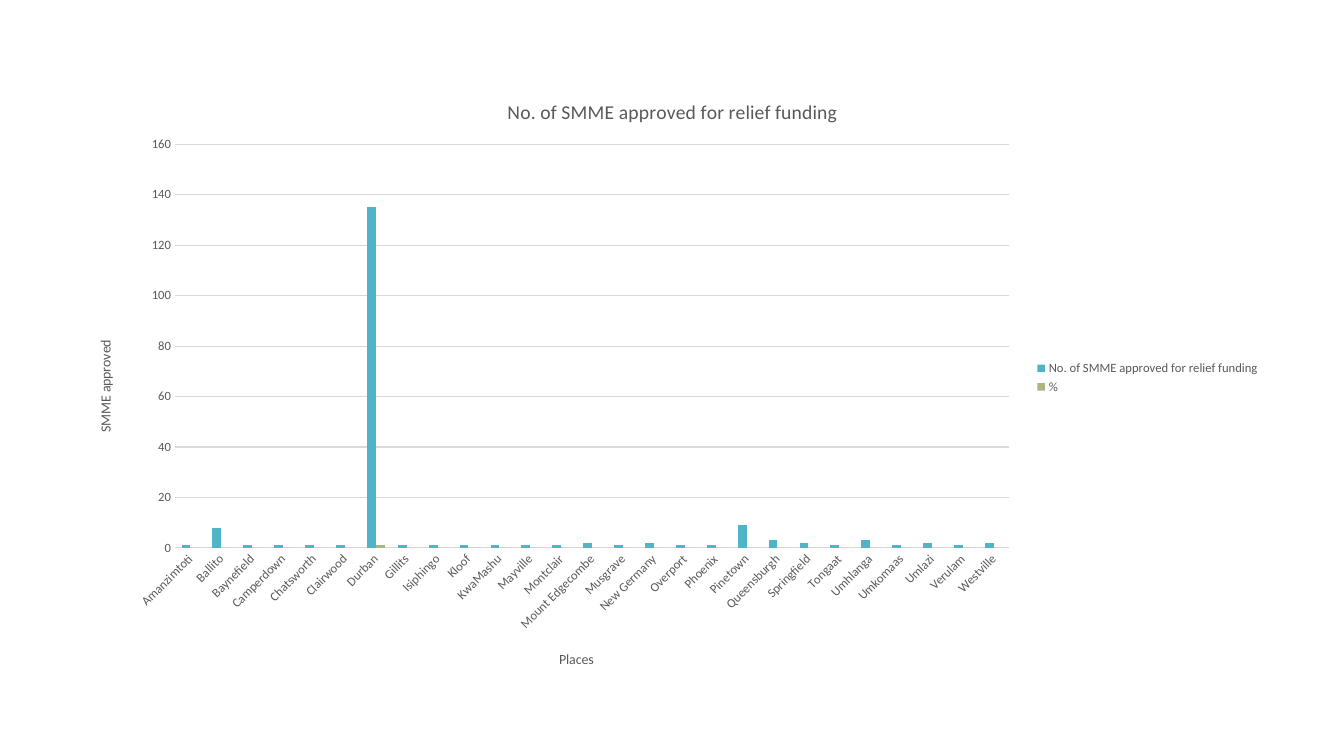
import pptx
import pptx.chart.data
import pptx.dml.color
import pptx.enum.chart
import pptx.oxml
import pptx.oxml.ns
import pptx.util
from dataclasses import dataclass

Pt = pptx.util.Pt


@dataclass(frozen=True)
class Theme:
    font: str = "Calibri"
    text: str = "595959"
    rule: str = "D9D9D9"
    approved: str = "50B4C8"
    percent: str = "A8B97F"
    title_size: float = 14
    axis_title_size: float = 10
    label_size: float = 9


THEME = Theme()
TITLE = "No. of SMME approved for relief funding"
CHART_BOX = (50.4, 50.4, 859, 438.5)

APPROVED = {
    "Amanzimtoti": 1, "Ballito": 8, "Baynefield": 1, "Camperdown": 1,
    "Chatsworth": 1, "Clairwood": 1, "Durban": 135, "Gillits": 1,
    "Isiphingo": 1, "Kloof": 1, "KwaMashu": 1, "Mayville": 1,
    "Montclair": 1, "Mount Edgecombe": 2, "Musgrave": 1, "New Germany": 2,
    "Overport": 1, "Phoenix": 1, "Pinetown": 9, "Queensburgh": 3,
    "Springfield": 2, "Tongaat": 1, "Umhlanga": 3, "Umkomaas": 1,
    "Umlazi": 2, "Verulam": 1, "Westville": 2,
}


def rgb(color):
    return pptx.dml.color.RGBColor.from_string(color)


def style_font(font, size):
    font.name = THEME.font
    font.size = Pt(size)
    font.bold = False
    font.color.rgb = rgb(THEME.text)


def style_line(line):
    line.color.rgb = rgb(THEME.rule)
    line.width = Pt(0.75)


def place(element, index, left, top, width=None, height=None):
    """Place a chart part at slide coordinates given in points."""
    for old in element.xpath("c:layout"):
        element.remove(old)
    x, y, w, h = CHART_BOX
    values = {"x": (left - x) / w, "y": (top - y) / h}
    modes = '<c:xMode val="edge"/><c:yMode val="edge"/>'
    if width:
        values |= {"w": width / w, "h": height / h}
        modes = '<c:layoutTarget val="inner"/>' + modes
    sizes = "".join(f'<c:{k} val="{v:.4f}"/>' for k, v in values.items())
    element.insert(index, pptx.oxml.parse_xml(
        f'<c:layout {pptx.oxml.ns.nsdecls("c")}><c:manualLayout>'
        f"{modes}{sizes}</c:manualLayout></c:layout>"))


def rotate(element, degrees):
    body = element.xpath(".//a:bodyPr")[0]
    body.set("rot", str(degrees * 60000))
    body.set("vert", "horz")


def add_title(owner, text, size, left, top):
    """Title a chart or an axis."""
    owner.has_title = True
    title = owner.chart_title if hasattr(owner, "chart_title") else owner.axis_title
    p = title.text_frame.paragraphs[0]
    r = p.add_run()
    r.text = text
    style_font(r.font, size)
    place(title._element, 1, left, top)
    return title


def style_axis(axis):
    axis.major_tick_mark = pptx.enum.chart.XL_TICK_MARK.NONE
    axis.minor_tick_mark = pptx.enum.chart.XL_TICK_MARK.NONE
    style_font(axis.tick_labels.font, THEME.label_size)


def add_column_chart(s):
    data = pptx.chart.data.CategoryChartData()
    data.categories = list(APPROVED)
    data.add_series(TITLE, list(APPROVED.values()))
    data.add_series("%", [int(place_name == "Durban") for place_name in APPROVED])
    chart = s.shapes.add_chart(
        pptx.enum.chart.XL_CHART_TYPE.COLUMN_CLUSTERED,
        *map(Pt, CHART_BOX), data).chart
    style_font(chart.font, THEME.label_size)

    # Columns
    plot = chart.plots[0]
    plot.gap_width = 150
    plot.overlap = 0
    plot.vary_by_categories = False
    for series, color in zip(plot.series, (THEME.approved, THEME.percent)):
        series.format.fill.solid()
        series.format.fill.fore_color.rgb = rgb(color)
    place(chart._chartSpace.xpath("c:chart/c:plotArea")[0], 0, 125, 103, 596, 288.5)
    return chart


def format_axes(chart):
    cat, val = chart.category_axis, chart.value_axis
    for axis in (cat, val):
        style_axis(axis)
    style_line(cat.format.line)
    rotate(cat._element.xpath("c:txPr")[0], -45)
    val.minimum_scale, val.maximum_scale, val.major_unit = 0, 160, 20
    val.format.line.fill.background()
    val.has_major_gridlines = True
    style_line(val.major_gridlines.format.line)
    add_title(cat, "Places", THEME.axis_title_size, 397.5, 462.5)
    title = add_title(val, "SMME approved", THEME.axis_title_size, 67, 241)
    rotate(title._element, -90)


def add_legend(chart):
    chart.has_legend = True
    legend = chart.legend
    legend.position = pptx.enum.chart.XL_LEGEND_POSITION.RIGHT
    legend.include_in_layout = False
    style_font(legend.font, THEME.label_size)
    place(legend._element, 1, 738, 255)


def main():
    prs = pptx.Presentation()
    prs.slide_width, prs.slide_height = Pt(960), Pt(540)
    s = prs.slides.add_slide(prs.slide_layouts[6])

    # Chart with its titles, axes and legend
    chart = add_column_chart(s)
    add_title(chart, TITLE, THEME.title_size, 360, 68)
    format_axes(chart)
    add_legend(chart)

    prs.save("out.pptx")


if __name__ == "__main__":
    main()
